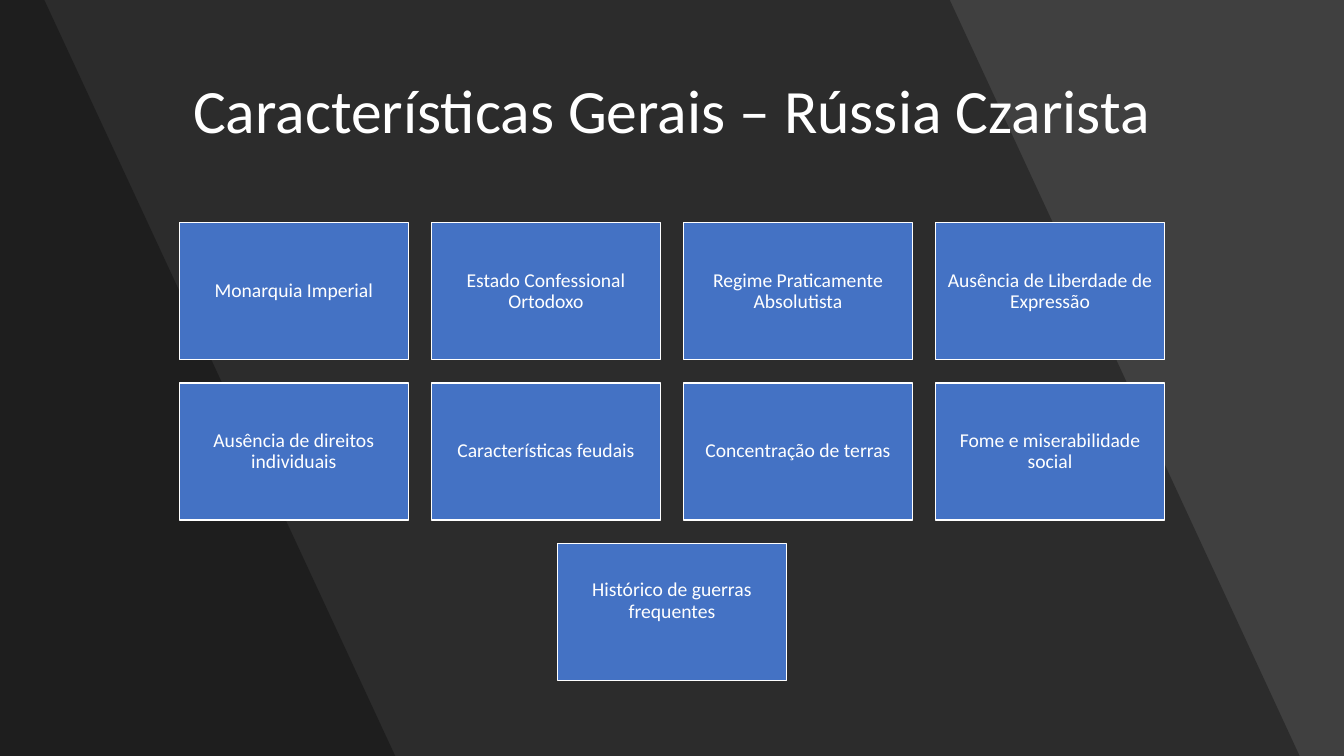
"""Build the slide on the general features of Tsarist Russia."""
from lxml.etree import SubElement
from pptx import Presentation
from pptx.dml.color import RGBColor
from pptx.enum.shapes import MSO_SHAPE
from pptx.enum.text import MSO_ANCHOR, MSO_AUTO_SIZE, PP_ALIGN
from pptx.oxml.ns import qn
from pptx.util import Inches, Pt

TITLE = "Características Gerais – Rússia Czarista"
ROWS = [
    ["Monarquia Imperial", "Estado Confessional Ortodoxo",
     "Regime Praticamente Absolutista", "Ausência de Liberdade de Expressão"],
    ["Ausência de direitos individuais", "Características feudais",
     "Concentração de terras", "Fome e miserabilidade social"],
    ["Histórico de guerras frequentes"],
]
COLORS = {"bg": "404040", "shade": "000000", "card": "4472C4", "text": "FFFFFF"}
FONT = "Calibri"
WIDTH, HEIGHT = 13.33, 7.5
SHADE_EDGES = [(9.42, 12.89), (0.44, 3.92)]
SHADE_OPACITY = 30
CARD_W, CARD_H, GAP, TOP = 2.27, 1.36, 0.23, 2.21
INSET, LAST_ROW_LIFT = 0.06, 0.21


def set_fill(fill, name):
    fill.solid()
    fill.fore_color.rgb = RGBColor.from_string(COLORS[name])


def add_shade(s, top_x, bottom_x):
    fb = s.shapes.build_freeform(0, 0)
    corners = [(top_x, 0), (bottom_x, HEIGHT), (0, HEIGHT)]
    fb.add_line_segments([(Inches(x), Inches(y)) for x, y in corners], close=True)
    sp = fb.convert_to_shape()
    sp.shadow.inherit = False
    set_fill(sp.fill, "shade")
    sp.line.fill.background()
    color = sp.fill._xPr.find(qn("a:solidFill")).find(qn("a:srgbClr"))
    SubElement(color, qn("a:alpha")).set("val", str(SHADE_OPACITY * 1000))


def write_text(tf, text, size):
    tf.word_wrap = True
    tf.auto_size = MSO_AUTO_SIZE.NONE
    tf.vertical_anchor = MSO_ANCHOR.MIDDLE
    p = tf.paragraphs[0]
    p.alignment = PP_ALIGN.CENTER
    p.line_spacing = 0.9
    r = p.add_run()
    r.text = text
    r.font.size = Pt(size)
    r.font.name = FONT
    r.font.color.rgb = RGBColor.from_string(COLORS["text"])


def add_card(s, x, y, text, lift):
    sp = s.shapes.add_shape(MSO_SHAPE.RECTANGLE, Inches(x), Inches(y),
                            Inches(CARD_W), Inches(CARD_H))
    sp.shadow.inherit = False
    set_fill(sp.fill, "card")
    set_fill(sp.line.fill, "text")
    sp.line.width = Pt(1)
    tf = sp.text_frame
    tf.margin_left = tf.margin_right = tf.margin_top = Inches(INSET)
    tf.margin_bottom = Inches(INSET + lift)
    write_text(tf, text, 14)


def main():
    prs = Presentation()
    prs.slide_width, prs.slide_height = Inches(WIDTH), Inches(HEIGHT)
    s = prs.slides.add_slide(prs.slide_layouts[5])
    set_fill(s.background.fill, "bg")
    for top_x, bottom_x in SHADE_EDGES:
        add_shade(s, top_x, bottom_x)

    title = s.shapes.title
    title.left, title.top = Inches(0.91), Inches(0.4)
    title.width, title.height = Inches(11.51), Inches(1.45)
    write_text(title.text_frame, TITLE, 44)
    s.shapes._spTree.append(title._element)

    for i, row in enumerate(ROWS):
        row_w = len(row) * (CARD_W + GAP) - GAP
        left = (WIDTH - row_w) / 2
        lift = LAST_ROW_LIFT if i == len(ROWS) - 1 else 0
        for j, text in enumerate(row):
            add_card(s, left + j * (CARD_W + GAP), TOP + i * (CARD_H + GAP), text, lift)
    prs.save("out.pptx")


if __name__ == "__main__":
    main()
